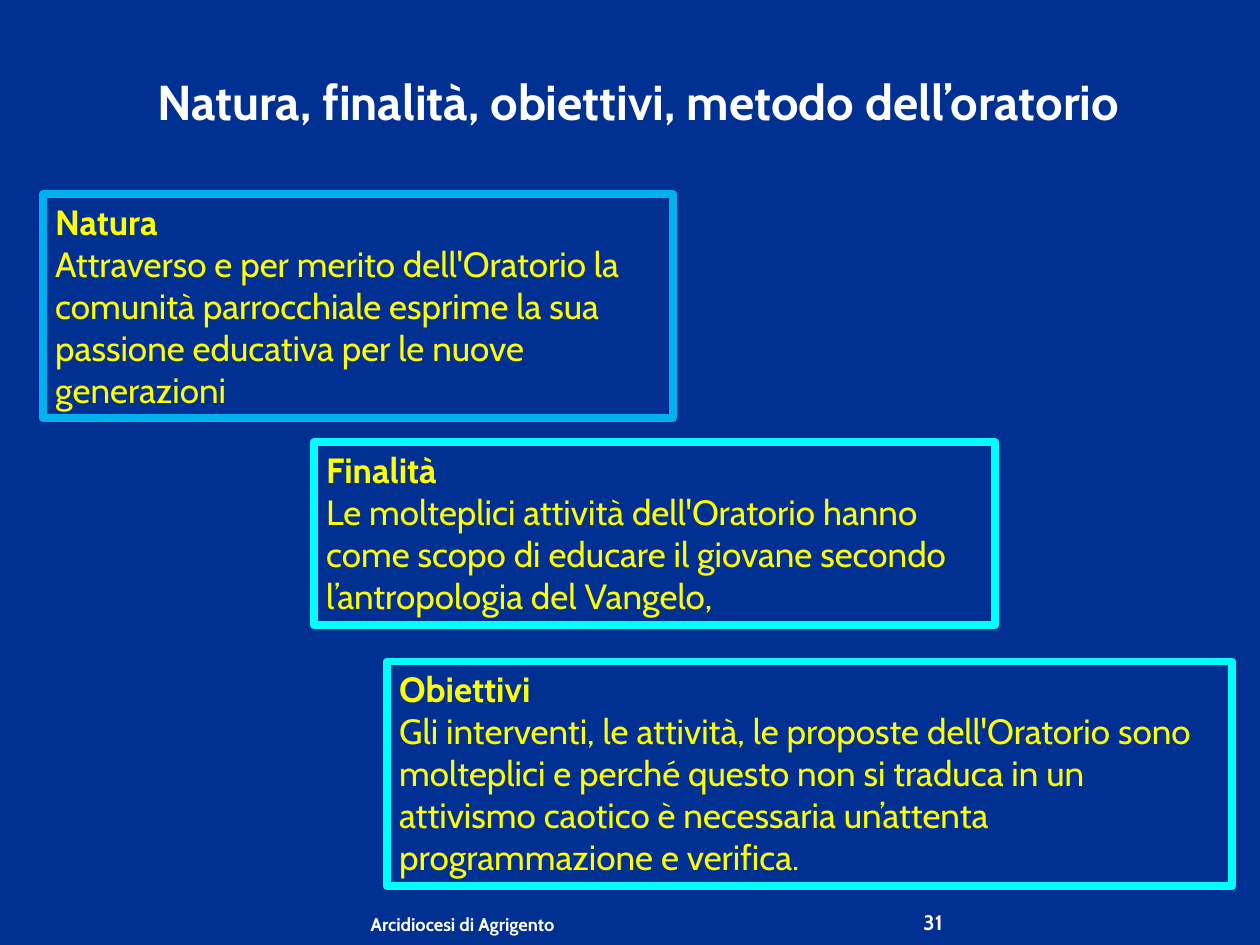
from lxml import etree
from pptx import Presentation
from pptx.dml.color import RGBColor
from pptx.enum.shapes import MSO_SHAPE
from pptx.enum.text import MSO_ANCHOR, MSO_AUTO_SIZE, PP_ALIGN
from pptx.oxml.ns import qn
from pptx.util import Inches, Pt

RECTANGLE = MSO_SHAPE.RECTANGLE
TOP, BOTTOM = MSO_ANCHOR.TOP, MSO_ANCHOR.BOTTOM
LEFT, CENTER, RIGHT = PP_ALIGN.LEFT, PP_ALIGN.CENTER, PP_ALIGN.RIGHT
NO_AUTOFIT = MSO_AUTO_SIZE.NONE
TITLE_ONLY = 5
COLUMNS, ROWS = 100, 75
BACKGROUND, WHITE, YELLOW = "003192", "FFFFFF", "FFFF00"
BLUE, CYAN = "00B0F0", "00FFFF"


def color(value):
    return RGBColor.from_string(value)


class OratorySlide:
    font_name = "Cabin"
    body_size = 20
    border_width = 4.5

    def __init__(self, presentation):
        self.column = presentation.slide_width / COLUMNS
        self.row = presentation.slide_height / ROWS
        self.slide = presentation.slides.add_slide(presentation.slide_layouts[TITLE_ONLY])
        fill = self.slide.background.fill
        fill.solid()
        fill.fore_color.rgb = color(BACKGROUND)

    def box(self, left, top, width, height):
        return (
            round(left * self.column),
            round(top * self.row),
            round(width * self.column),
            round(height * self.row),
        )

    def format_paragraph(self, paragraph, size, font_color, bold=True, alignment=LEFT):
        paragraph.alignment = alignment
        paragraph.font.name = self.font_name
        paragraph.font.size = Pt(size)
        paragraph.font.bold = bold
        paragraph.font.color.rgb = color(font_color)

    def title(self, text, *area):
        shape = self.slide.shapes.title
        shape.left, shape.top, shape.width, shape.height = self.box(*area)
        frame = shape.text_frame
        frame.text = text
        frame.word_wrap = True
        frame.auto_size = NO_AUTOFIT
        frame.vertical_anchor = TOP
        self.format_paragraph(frame.paragraphs[0], 28, WHITE, alignment=CENTER)

    def card(self, heading, body, border, *area):
        shape = self.slide.shapes.add_shape(RECTANGLE, *self.box(*area))
        shape.shadow.inherit = False
        shape.fill.background()
        shape.line.color.rgb = color(border)
        shape.line.width = Pt(self.border_width)
        etree.SubElement(shape.line._ln, qn("a:round"))
        frame = shape.text_frame
        frame.word_wrap = True
        frame.vertical_anchor = TOP
        frame.text = f"{heading}\n{body}"
        for paragraph, bold in zip(frame.paragraphs, (True, False)):
            self.format_paragraph(paragraph, self.body_size, YELLOW, bold)

    def footer(self, text, size, side_margin, *area):
        frame = self.slide.shapes.add_textbox(*self.box(*area)).text_frame
        frame.margin_left = frame.margin_right = Inches(side_margin)
        frame.margin_top = frame.margin_bottom = 0
        frame.word_wrap = True
        frame.vertical_anchor = BOTTOM
        frame.text = text
        self.format_paragraph(frame.paragraphs[0], size, WHITE, alignment=RIGHT)


def main():
    presentation = Presentation()
    presentation.slide_width = Inches(10)
    presentation.slide_height = Inches(7.5)

    page = OratorySlide(presentation)
    page.title("Natura, finalità, obiettivi, metodo dell’oratorio", 3, 5.2, 95.3, 5.7)
    page.card(
        "Natura",
        "Attraverso e per merito dell'Oratorio la comunità parrocchiale esprime "
        "la sua passione educativa per le nuove generazioni",
        BLUE, 3.4, 15.4, 50, 17.8,
    )
    page.card(
        "Finalità",
        "Le molteplici attività dell'Oratorio hanno come scopo di educare "
        "il giovane secondo l’antropologia del Vangelo,",
        CYAN, 24.9, 35.1, 54.1, 14.5,
    )
    page.card(
        "Obiettivi",
        "Gli interventi, le attività, le proposte dell'Oratorio sono molteplici "
        "e perché questo non si traduca in un attivismo caotico è necessaria "
        "un’attenta programmazione e verifica.",
        CYAN, 30.7, 52.5, 67.1, 17.8,
    )
    page.footer("31", 12, 0, 68.4, 71.7, 6.4, 2.5)
    page.footer("Arcidiocesi di Agrigento", 10.5, 0.1, 5, 71.7, 40, 2.5)

    presentation.save("out.pptx")


if __name__ == "__main__":
    main()
